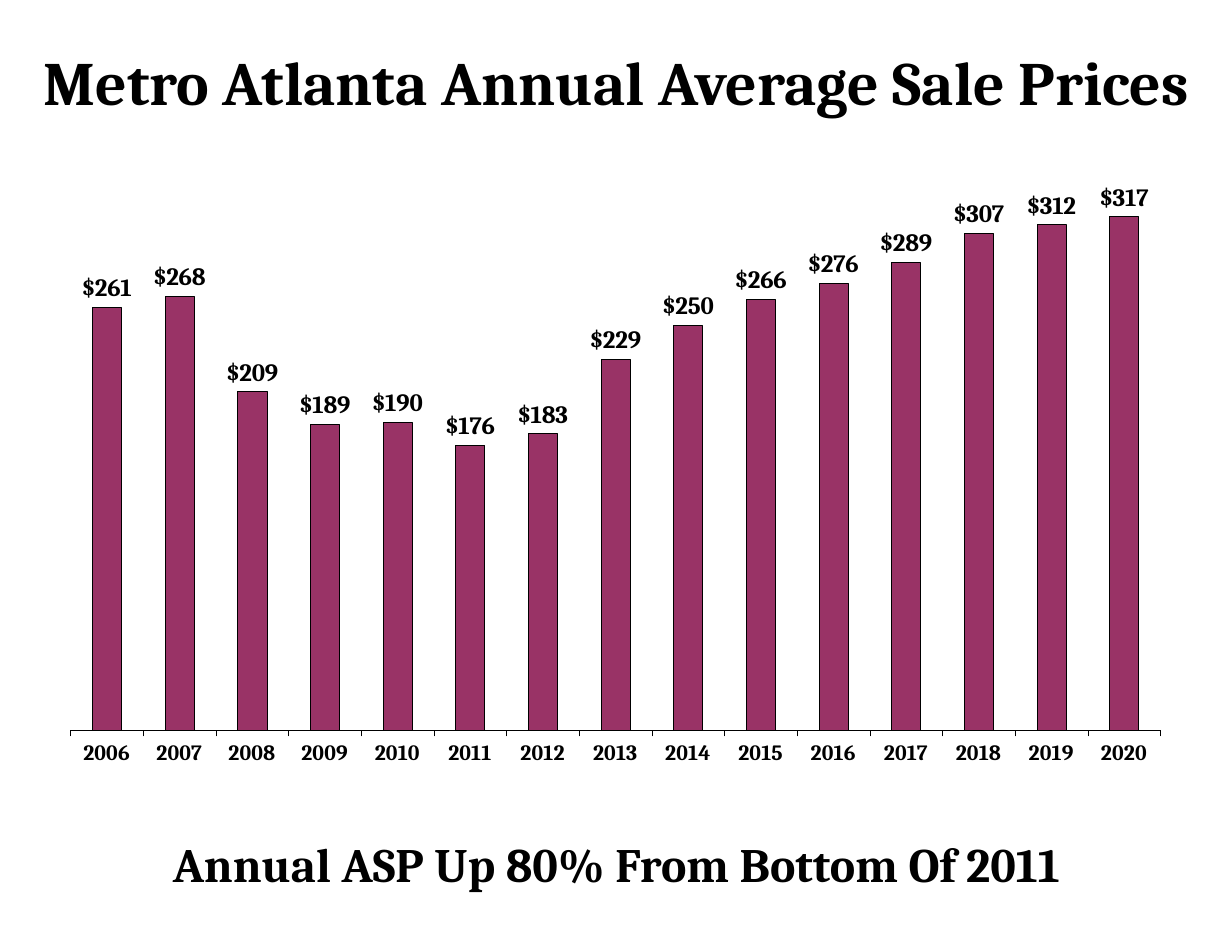
from lxml.etree import SubElement
from pptx import Presentation
from pptx.chart.data import CategoryChartData
from pptx.dml.color import RGBColor
from pptx.enum.chart import XL_CHART_TYPE, XL_LABEL_POSITION, XL_TICK_LABEL_POSITION, XL_TICK_MARK
from pptx.enum.text import MSO_ANCHOR, MSO_AUTO_SIZE, PP_ALIGN
from pptx.oxml.ns import qn
from pptx.util import Inches, Pt

BLACK = RGBColor(0x00, 0x00, 0x00)
PLUM = RGBColor(0x99, 0x33, 0x66)
FONT = "Cambria"
PRICES = [261, 268, 209, 189, 190, 176, 183, 229, 250, 266, 276, 289, 307, 312, 317]
YEARS = [str(2006 + offset) for offset in range(len(PRICES))]


class PriceSlide:
    """Hold the style and the current slide, and add each kind of element."""

    def __init__(self, deck):
        self.slide = deck.slides.add_slide(deck.slide_layouts[5])

    def style(self, font, size):
        font.name = FONT
        font.size = Pt(size)
        font.bold = True
        font.color.rgb = BLACK

    def fill_text(self, shape, text, size, anchor):
        frame = shape.text_frame
        frame.text = text
        frame.word_wrap = True
        frame.auto_size = MSO_AUTO_SIZE.NONE
        frame.vertical_anchor = anchor
        paragraph = frame.paragraphs[0]
        paragraph.alignment = PP_ALIGN.CENTER
        self.style(paragraph.runs[0].font, size)
        return frame

    def title(self, text, left, top, width, height):
        heading = self.slide.shapes.title
        heading.left, heading.top = Inches(left), Inches(top)
        heading.width, heading.height = Inches(width), Inches(height)
        self.fill_text(heading, text, 39.6, MSO_ANCHOR.MIDDLE)

    def takeaway(self, text, left, top, width, height):
        box = self.slide.shapes.add_textbox(
            Inches(left), Inches(top), Inches(width), Inches(height))
        frame = self.fill_text(box, text, 30.8, MSO_ANCHOR.TOP)
        frame.margin_top = Inches(0.23)
        frame.margin_bottom = 0
        frame.paragraphs[0].line_spacing = 0.9

    def column_chart(self, years, prices, left, top, width, height):
        data = CategoryChartData()
        data.categories = years
        data.add_series("Average sale price", prices)
        chart = self.slide.shapes.add_chart(
            XL_CHART_TYPE.COLUMN_CLUSTERED,
            Inches(left), Inches(top), Inches(width), Inches(height), data).chart
        chart.has_legend = False
        chart.has_title = False
        self.style(chart.font, 14)

        year_axis = chart.category_axis
        year_axis.tick_label_position = XL_TICK_LABEL_POSITION.LOW
        year_axis.major_tick_mark = XL_TICK_MARK.OUTSIDE
        year_axis.format.line.color.rgb = BLACK
        year_axis.format.line.width = Pt(0.02)
        self.style(year_axis.tick_labels.font, 14)

        price_axis = chart.value_axis
        price_axis.minimum_scale = 0
        price_axis.maximum_scale = 350
        price_axis.has_major_gridlines = False
        price_axis.visible = False

        plot = chart.plots[0]
        plot.gap_width = 150
        plot.vary_by_categories = False
        columns = plot.series[0]
        columns.format.fill.solid()
        columns.format.fill.fore_color.rgb = PLUM
        columns.format.line.color.rgb = BLACK
        columns.format.line.width = Pt(0.06)
        labels = columns.data_labels
        labels.show_value = True
        labels.number_format = "\\$#,##0"
        labels.number_format_is_linked = False
        labels.position = XL_LABEL_POSITION.OUTSIDE_END
        self.style(labels.font, 16)
        self.place_plot(chart, 0.008, 0.087, 0.992, 0.792)

    def place_plot(self, chart, x, y, w, h):
        plot_area = chart.plots[0]._element.getparent()
        layout = plot_area.find(qn("c:layout"))
        if layout is None:
            layout = SubElement(plot_area, qn("c:layout"))
            plot_area.insert(0, layout)
        manual = SubElement(layout, qn("c:manualLayout"))
        settings = {"layoutTarget": "inner", "xMode": "edge", "yMode": "edge",
                    "x": x, "y": y, "w": w, "h": h}
        for name, value in settings.items():
            SubElement(manual, qn(f"c:{name}")).set("val", str(value))


def main():
    deck = Presentation()
    deck.slide_width, deck.slide_height = Inches(11), Inches(8.5)
    page = PriceSlide(deck)
    page.takeaway("Annual ASP Up 80% From Bottom Of 2011", 0.28, 7.28, 10.45, 0.64)
    page.column_chart(YEARS, PRICES, 0.55, 0.9, 9.81, 6.39)
    page.title("Metro Atlanta Annual Average Sale Prices", 0, 0.49, 11, 0.46)
    deck.save("out.pptx")


if __name__ == "__main__":
    main()
